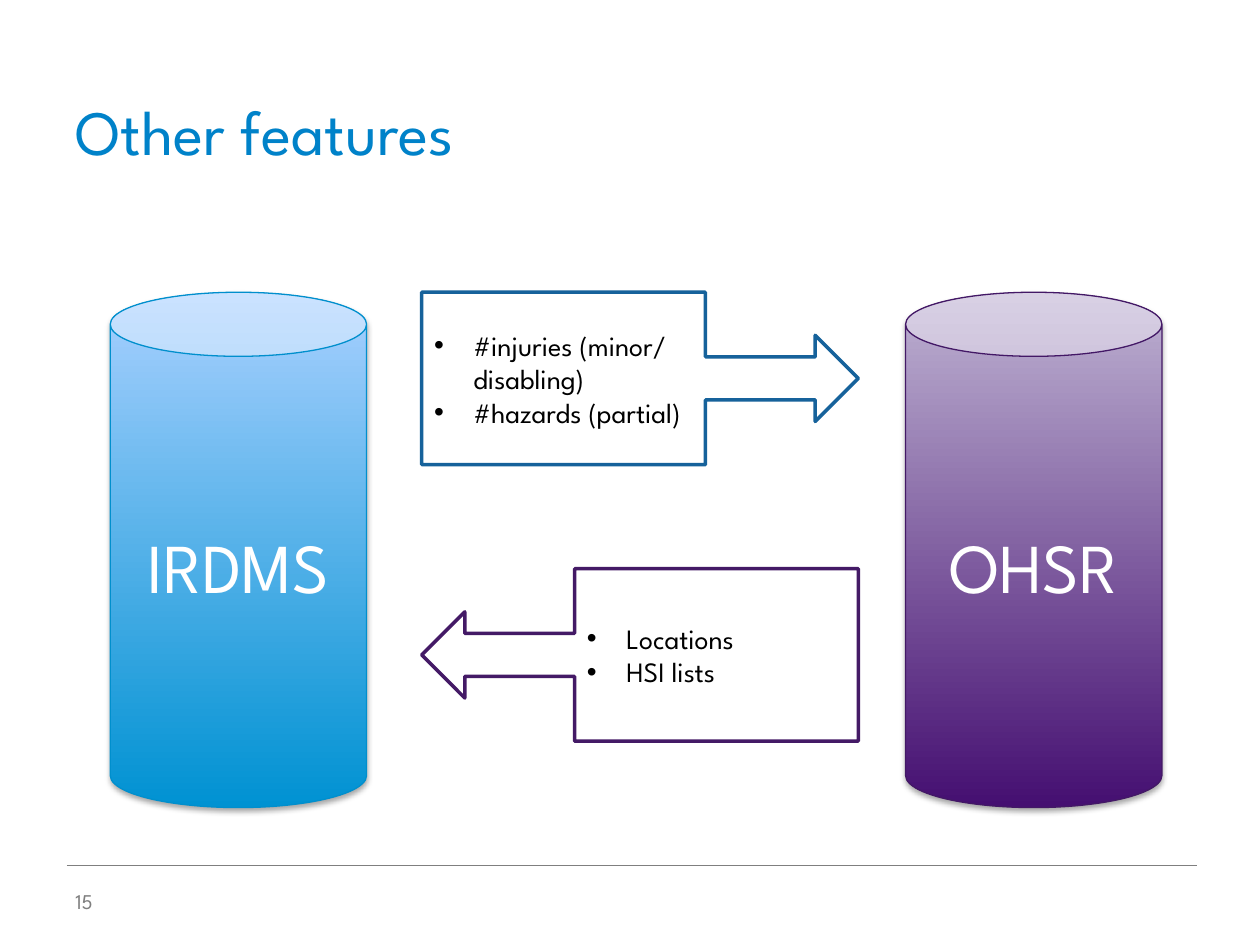
from dataclasses import dataclass

from lxml.etree import SubElement as Sub
from pptx import Presentation
from pptx.dml.color import RGBColor as Rgb
from pptx.enum.shapes import MSO_CONNECTOR as Conn, MSO_SHAPE as Kind
from pptx.enum.text import MSO_ANCHOR as Anchor, MSO_AUTO_SIZE as Auto, PP_ALIGN as Align
from pptx.oxml.ns import qn
from pptx.util import Pt


@dataclass(frozen=True)
class Theme:
    font: str = "League Spartan"
    title: str = "0082C9"
    gray: str = "7F7F7F"
    black: str = "000000"
    white: str = "FFFFFF"
    blue: tuple = ("0092D2", "A8D0FF", "008FCD")
    plum: tuple = ("450F71", "BEB2D2", "431866")
    send: str = "16629B"
    back: str = "441A66"
    head: int = 36
    label: int = 40
    body: int = 16
    small: int = 12


T = Theme()


def hue(code):
    return Rgb.from_string(code)


def write(shape, *lines, size, color, align=Align.LEFT, anchor=Anchor.MIDDLE, bullet=False):
    frame = shape.text_frame
    frame.word_wrap = True
    frame.auto_size = Auto.NONE
    frame.vertical_anchor = anchor
    for n, line in enumerate(lines):
        para = frame.add_paragraph() if n else frame.paragraphs[0]
        para.alignment = align
        if bullet:
            props = para._p.get_or_add_pPr()
            props.set("marL", str(Pt(22.5)))
            props.set("indent", str(-Pt(22.5)))
            Sub(props, qn("a:buFont"), typeface="Arial")
            Sub(props, qn("a:buChar"), char="•")
        run = para.add_run()
        run.text = line
        run.font.name = T.font
        run.font.size = Pt(size)
        run.font.color.rgb = hue(color)


def shade(shape):
    list_ = shape._element.spPr.find(qn("a:effectLst"))
    outer = Sub(list_, qn("a:outerShdw"), blurRad=str(Pt(3.1)), dist=str(Pt(1.8)),
                dir="5400000", rotWithShape="0")
    tint = Sub(outer, qn("a:srgbClr"), val=T.black)
    Sub(tint, qn("a:alpha"), val="35000")


def add(slide, kind, box, edge, width):
    shape = slide.shapes.add_shape(kind, *map(Pt, box))
    shape.shadow.inherit = False
    shape.line.color.rgb = hue(edge)
    shape.line.width = Pt(width)
    return shape


def store(slide, box, name, tones):
    low, high, edge = tones
    can = add(slide, Kind.CAN, box, edge, 0.75)
    can.fill.gradient()
    can.fill.gradient_angle = 90
    for stop, tone in zip(can.fill.gradient_stops, (low, high)):
        stop.color.rgb = hue(tone)
    shade(can)
    write(can, name, size=T.label, color=T.white, align=Align.CENTER)


def flow(slide, box, kind, edge, items):
    arrow = add(slide, kind, box, edge, 2)
    arrow.fill.solid()
    arrow.fill.fore_color.rgb = hue(T.white)
    write(arrow, *items, size=T.body, color=T.black, bullet=True)


def header(slide, box, text):
    title = slide.shapes.title
    title.left, title.top, title.width, title.height = map(Pt, box)
    write(title, text, size=T.head, color=T.title, anchor=Anchor.BOTTOM)


def footer(slide, box, number):
    left, top, width, height = box
    rule = slide.shapes.add_connector(Conn.STRAIGHT, Pt(left), Pt(top), Pt(left + width), Pt(top))
    rule.line.color.rgb = hue(T.gray)
    rule.line.width = Pt(0.25)
    Sub(rule._element.spPr, qn("a:effectLst"))
    page = slide.shapes.add_textbox(Pt(left - 2.2), Pt(top + 6.4), Pt(77), Pt(height - 6.4))
    write(page, number, size=T.small, color=T.gray)


def exchange(slide, box):
    left, top, width, height = box
    can, wide, tall = 146.5, 249.5, 98.5
    mid = left + 178
    store(slide, (left, top, can, height), "IRDMS", T.blue)
    store(slide, (left + width - can, top, can, height), "OHSR", T.plum)
    flow(slide, (mid, top, wide, tall), Kind.RIGHT_ARROW_CALLOUT, T.send,
         ("#injuries (minor/ disabling)", "#hazards (partial)"))
    flow(slide, (mid, top + 158, wide, tall), Kind.LEFT_ARROW_CALLOUT, T.back,
         ("Locations", "HSI lists"))


def main():
    deck = Presentation()
    deck.slide_width, deck.slide_height = Pt(720), Pt(540)
    slide = deck.slides.add_slide(deck.slide_layouts[5])
    header(slide, (36, 21.6, 648, 77.8), "Other features")
    footer(slide, (38.2, 494.2, 645.8, 35), "15")
    exchange(slide, (63, 167, 601, 294.5))
    deck.save("out.pptx")


if __name__ == "__main__":
    main()
